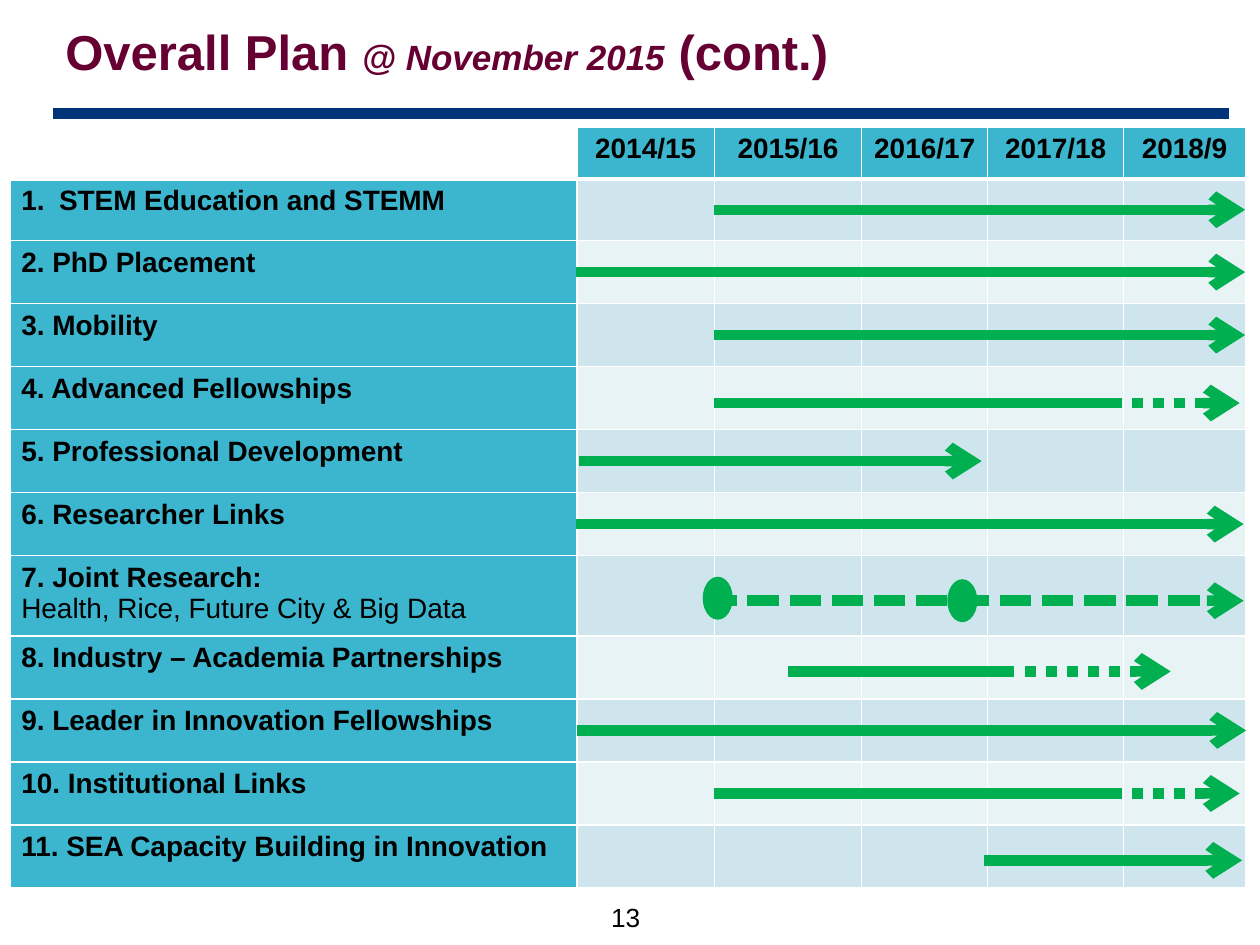
from itertools import accumulate
from lxml import etree
from pptx import Presentation
from pptx.dml.color import RGBColor
from pptx.enum.dml import MSO_LINE as Dash
from pptx.enum.shapes import MSO_CONNECTOR as Conn, MSO_SHAPE as Shape
from pptx.enum.text import MSO_ANCHOR as Anchor, PP_ALIGN as Align
from pptx.oxml.ns import qn
from pptx.util import Cm, Pt

NAVY, PLUM, TEAL, GREEN = "003478", "660033", "3CB6CE", "00B050"
WHITE, BLACK = "FFFFFF", "000000"
BANDS = ["CEE5ED", "E8F3F6"]

COLS = [11.43, 2.77, 2.97, 2.54, 2.74, 2.46]
ROWS = [1.04, 1.24] + [1.27] * 5 + [1.62] + [1.27] * 4
YEARS = ["2014/15", "2015/16", "2016/17", "2017/18", "2018/9"]
PLANS = [
    "STEM Education and STEMM",
    "2. PhD Placement",
    "3. Mobility",
    "4. Advanced Fellowships",
    "5. Professional Development",
    "6. Researcher Links",
    "7. Joint Research:",
    "8. Industry – Academia Partnerships",
    "9. Leader in Innovation Fellowships",
    "10. Institutional Links",
    "11. SEA Capacity Building in Innovation",
]
TOPICS = "Health, Rice, Future City & Big Data"

# Per row: start, end of the solid part, end of the broken part, shift down
SPANS = [
    (14.2, 24.9, None, 0),
    (11.41, 24.9, None, 0),
    (14.2, 24.9, None, 0),
    (14.2, 22.2, 24.79, 0.1),
    (11.48, 19.59, None, 0),
    (11.41, 24.87, None, 0),
    (14.02, None, 24.87, 0.1),
    (15.68, 20.04, 23.4, 0.08),
    (11.43, 24.92, None, 0),
    (14.2, 22.2, 24.79, 0),
    (19.64, 24.84, None, 0.08),
]
DOTS = [(14.27, 0.05), (19.2, 0.1)]
JOINT = 6  # index of the joint research row


def rgb(color):
    return RGBColor.from_string(color)


def write(para, text, size=16, color=BLACK, bold=False, italic=False):
    run = para.add_run()
    run.text = text
    font = run.font
    font.name, font.size, font.color.rgb = "Arial", Pt(size), rgb(color)
    font.bold, font.italic = bold, italic


def text_box(slide, x, y, w, h):
    frame = slide.shapes.add_textbox(Cm(x), Cm(y), Cm(w), Cm(h)).text_frame
    frame.word_wrap = True
    frame.vertical_anchor = Anchor.MIDDLE
    return frame.paragraphs[0]


def draw_line(slide, x1, x2, y, color, dash=None, head=False):
    line = slide.shapes.add_connector(Conn.STRAIGHT, Cm(x1), Cm(y), Cm(x2), Cm(y))
    line.line.color.rgb = rgb(color)
    line.line.width = Pt(6)
    if dash is not None:
        line.line.dash_style = dash
    props = line._element.spPr
    if head:
        etree.SubElement(props.find(qn("a:ln")), qn("a:tailEnd"), type="arrow")
    etree.SubElement(props, qn("a:effectLst"))


def style_cell(cell, fill, top=1, bottom=1):
    """Fill the cell and give it white borders; top and bottom are in points."""
    cell.fill.solid()
    cell.fill.fore_color.rgb = rgb(fill)
    cell.margin_left = cell.margin_right = Cm(0.23)
    props = cell._tc.get_or_add_tcPr()
    sides = {"L": 1, "R": 1, "T": top, "B": bottom}
    for i, (side, width) in enumerate(sides.items()):
        edge = etree.Element(qn("a:ln" + side), w=str(Pt(width)))
        paint = etree.SubElement(edge, qn("a:solidFill"))
        etree.SubElement(paint, qn("a:srgbClr"), val=WHITE)
        props.insert(i, edge)
    cell.text_frame.paragraphs[0].font.size = Pt(16)


def number(para):
    props = para._p.get_or_add_pPr()
    props.set("marL", str(Cm(0.76)))
    props.set("indent", str(-Cm(0.76)))
    etree.SubElement(props, qn("a:buFont"), typeface="Arial")
    etree.SubElement(props, qn("a:buAutoNum"), type="arabicPeriod")


def add_title(slide, x, y, w, h):
    para = text_box(slide, x, y, w, h)
    write(para, "Overall Plan ", 28, PLUM, bold=True)
    write(para, "@ November 2015", 20, PLUM, bold=True, italic=True)
    write(para, " (cont.)", 28, PLUM, bold=True)
    draw_line(slide, x, x + 23.7, y + 2.37, NAVY)


def add_grid(slide, x, y):
    frame = slide.shapes.add_table(len(ROWS), len(COLS), Cm(x), Cm(y),
                                   Cm(sum(COLS)), Cm(sum(ROWS)))
    table = frame.table
    for col, width in zip(table.columns, COLS):
        col.width = Cm(width)
    for row, height in zip(table.rows, ROWS):
        row.height = Cm(height)

    for c, year in enumerate([""] + YEARS):
        cell = table.cell(0, c)
        style_cell(cell, TEAL if year else WHITE, bottom=3)
        if year:
            para = cell.text_frame.paragraphs[0]
            para.alignment = Align.CENTER
            write(para, year, bold=True)

    for r, plan in enumerate(PLANS):
        para = table.cell(r + 1, 0).text_frame.paragraphs[0]
        if r == 0:
            number(para)
        for c in range(len(COLS)):
            style_cell(table.cell(r + 1, c), BANDS[r % 2] if c else TEAL,
                       top=1 if r else 3)
        write(para, plan, bold=True)
        if r == JOINT:
            para.add_line_break()
            write(para, TOPICS)


def add_dot(slide, x, y, w=0.58, h=0.84):
    dot = slide.shapes.add_shape(Shape.OVAL, Cm(x - w / 2), Cm(y - h / 2), Cm(w), Cm(h))
    dot.shadow.inherit = False
    dot.fill.solid()
    dot.fill.fore_color.rgb = dot.line.color.rgb = rgb(GREEN)
    dot.line.width = Pt(0.75)


def add_spans(slide, x, y):
    """Draw the time arrows over the grid whose top left corner is x, y."""
    mids = [y + end - high / 2 for end, high in zip(accumulate(ROWS), ROWS)][1:]
    for mid, (start, solid, broken, shift) in zip(mids, SPANS):
        level = mid + shift
        if solid:
            draw_line(slide, x + start, x + solid, level, GREEN, head=not broken)
        if broken:
            dash = Dash.ROUND_DOT if solid else Dash.SQUARE_DOT
            draw_line(slide, x + (solid or start), x + broken, level, GREEN, dash, True)
    for left, shift in DOTS:
        add_dot(slide, x + left, mids[JOINT] + shift)


def main():
    deck = Presentation()
    deck.slide_width, deck.slide_height = Cm(25.4), Cm(19.05)
    slide = deck.slides.add_slide(deck.slide_layouts[6])
    add_title(slide, 1.07, -0.08, 23.62, 2.21)
    add_grid(slide, 0.2, 2.57)
    add_spans(slide, 0.2, 2.57)
    write(text_box(slide, 12.07, 17.86, 1.9, 1.27), "13", 15)
    deck.save("out.pptx")


if __name__ == "__main__":
    main()
